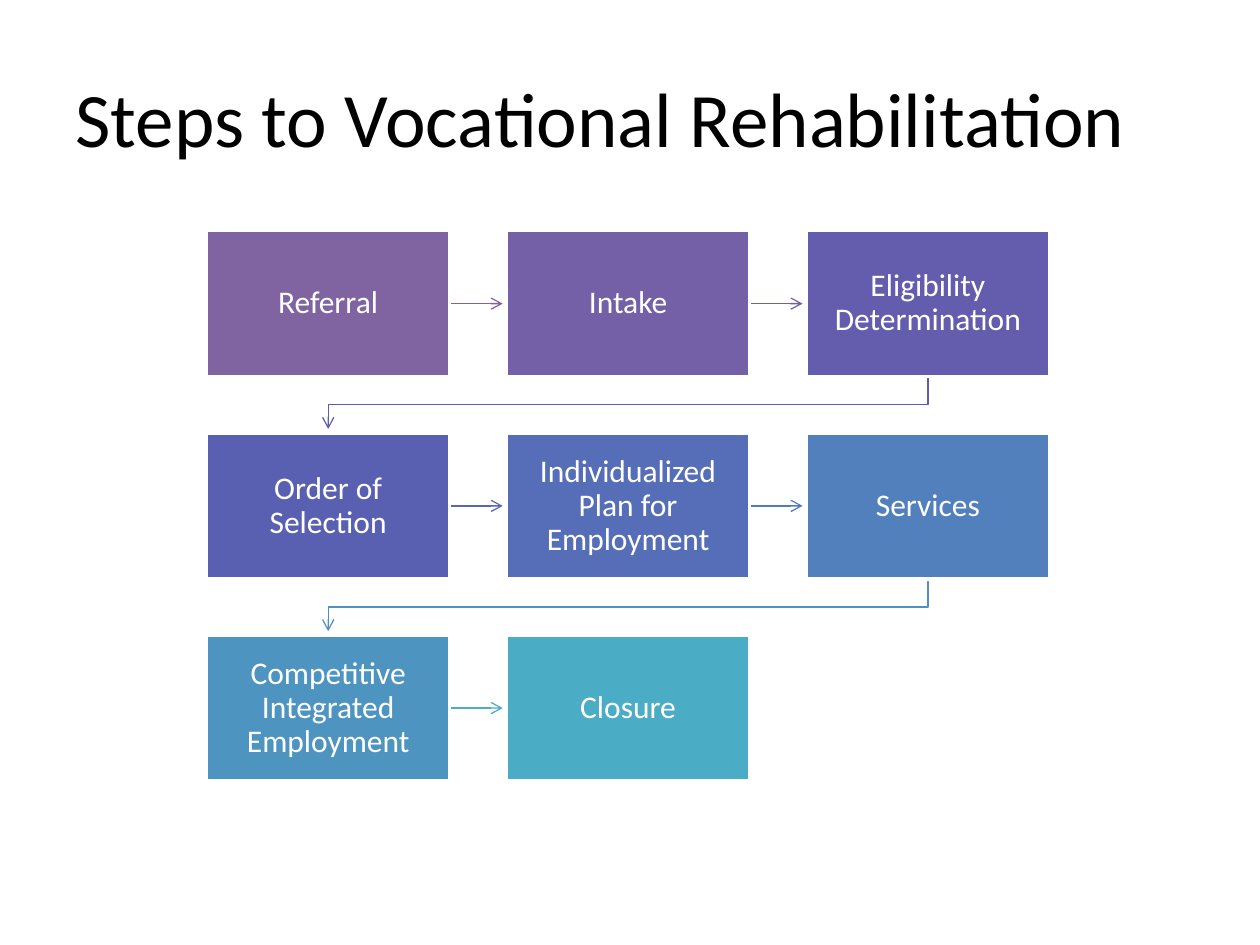
from lxml.etree import SubElement
from pptx import Presentation
from pptx.dml.color import RGBColor
from pptx.enum.shapes import MSO_CONNECTOR, MSO_SHAPE
from pptx.enum.text import MSO_ANCHOR, PP_ALIGN
from pptx.oxml.ns import qn
from pptx.util import Inches, Pt

WHITE = RGBColor(0xFF, 0xFF, 0xFF)
BLACK = RGBColor(0x00, 0x00, 0x00)
FONT = "Calibri"

# Label, box colour and colour of the arrow to the next step
STEPS = [
    ("Referral", RGBColor(0x80, 0x64, 0xA2), RGBColor(0x80, 0x64, 0xA2)),
    ("Intake", RGBColor(0x74, 0x60, 0xA7), RGBColor(0x71, 0x60, 0xA8)),
    ("Eligibility Determination", RGBColor(0x64, 0x5D, 0xAD), RGBColor(0x5F, 0x5B, 0xAE)),
    ("Order of Selection", RGBColor(0x59, 0x60, 0xB2), RGBColor(0x57, 0x67, 0xB4)),
    ("Individualized Plan for Employment", RGBColor(0x55, 0x6E, 0xB7), RGBColor(0x53, 0x7A, 0xBA)),
    ("Services", RGBColor(0x52, 0x80, 0xBC), RGBColor(0x4F, 0x91, 0xC0)),
    ("Competitive Integrated Employment", RGBColor(0x4E, 0x94, 0xC1), RGBColor(0x4B, 0xAC, 0xC6)),
    ("Closure", RGBColor(0x4B, 0xAC, 0xC6), None),
]

# Grid of steps, in inches
COLUMNS = 3
LEFT, TOP = 1.64, 1.83
BOX_WIDTH, BOX_HEIGHT = 1.93, 1.16
COLUMN_STEP, ROW_STEP = 2.38, 1.605
ARROW_GAP = 0.03  # between an arrowhead and the next box


def style_arrow(arrow, color):
    arrow.line.color.rgb = color
    arrow.line.width = Pt(0.75)
    properties = arrow.element.spPr
    SubElement(properties.find(qn("a:ln")), qn("a:tailEnd"), type="arrow")
    SubElement(properties, qn("a:effectLst"))


deck = Presentation()
deck.slide_width, deck.slide_height = Inches(10), Inches(7.5)
page = deck.slides.add_slide(deck.slide_layouts[5])

# Title
title = page.shapes.title
title.left, title.top = Inches(0.5), Inches(0.3)
title.width, title.height = Inches(9), Inches(1.25)
title.text_frame.text = "Steps to Vocational Rehabilitation"
title.text_frame.vertical_anchor = MSO_ANCHOR.MIDDLE
para = title.text_frame.paragraphs[0]
para.alignment = PP_ALIGN.LEFT
para.font.name, para.font.size = FONT, Pt(44)
para.font.color.rgb = BLACK

# Steps, each arrow lying behind the box it leaves
for index, (label, fill_color, arrow_color) in enumerate(STEPS):
    row, column = divmod(index, COLUMNS)
    left = LEFT + column * COLUMN_STEP
    top = TOP + row * ROW_STEP
    right, bottom = left + BOX_WIDTH, top + BOX_HEIGHT
    middle = top + BOX_HEIGHT / 2
    ends_row = column == COLUMNS - 1
    has_next = arrow_color is not None

    if has_next and ends_row:
        # Bent arrow back to the first column of the next row
        start, end = left + BOX_WIDTH / 2, LEFT + BOX_WIDTH / 2
        next_top = top + ROW_STEP
        bend = (bottom + next_top) / 2
        path = page.shapes.build_freeform(Inches(start), Inches(bottom))
        path.add_line_segments(
            [(Inches(x), Inches(y)) for x, y in
             [(start, bend), (end, bend), (end, next_top - ARROW_GAP)]],
            close=False)
        arrow = path.convert_to_shape()
        arrow.fill.background()
        style_arrow(arrow, arrow_color)
    elif has_next:
        arrow = page.shapes.add_connector(
            MSO_CONNECTOR.STRAIGHT, Inches(right), Inches(middle),
            Inches(left + COLUMN_STEP - ARROW_GAP), Inches(middle))
        style_arrow(arrow, arrow_color)

    box = page.shapes.add_shape(
        MSO_SHAPE.RECTANGLE, Inches(left), Inches(top),
        Inches(BOX_WIDTH), Inches(BOX_HEIGHT))
    box.shadow.inherit = False
    box.fill.solid()
    box.fill.fore_color.rgb = fill_color
    box.line.color.rgb = WHITE
    box.line.width = Pt(2)
    if has_next and not ends_row:
        arrow.begin_connect(box, 3)

    frame = box.text_frame
    frame.word_wrap = True
    frame.vertical_anchor = MSO_ANCHOR.MIDDLE
    frame.margin_left = frame.margin_right = Inches(0.14)
    frame.margin_top = frame.margin_bottom = Inches(0.14)
    frame.text = label
    para = frame.paragraphs[0]
    para.alignment = PP_ALIGN.CENTER
    para.line_spacing = 0.9
    para.font.name, para.font.size = FONT, Pt(18)
    para.font.color.rgb = WHITE

deck.save("out.pptx")
